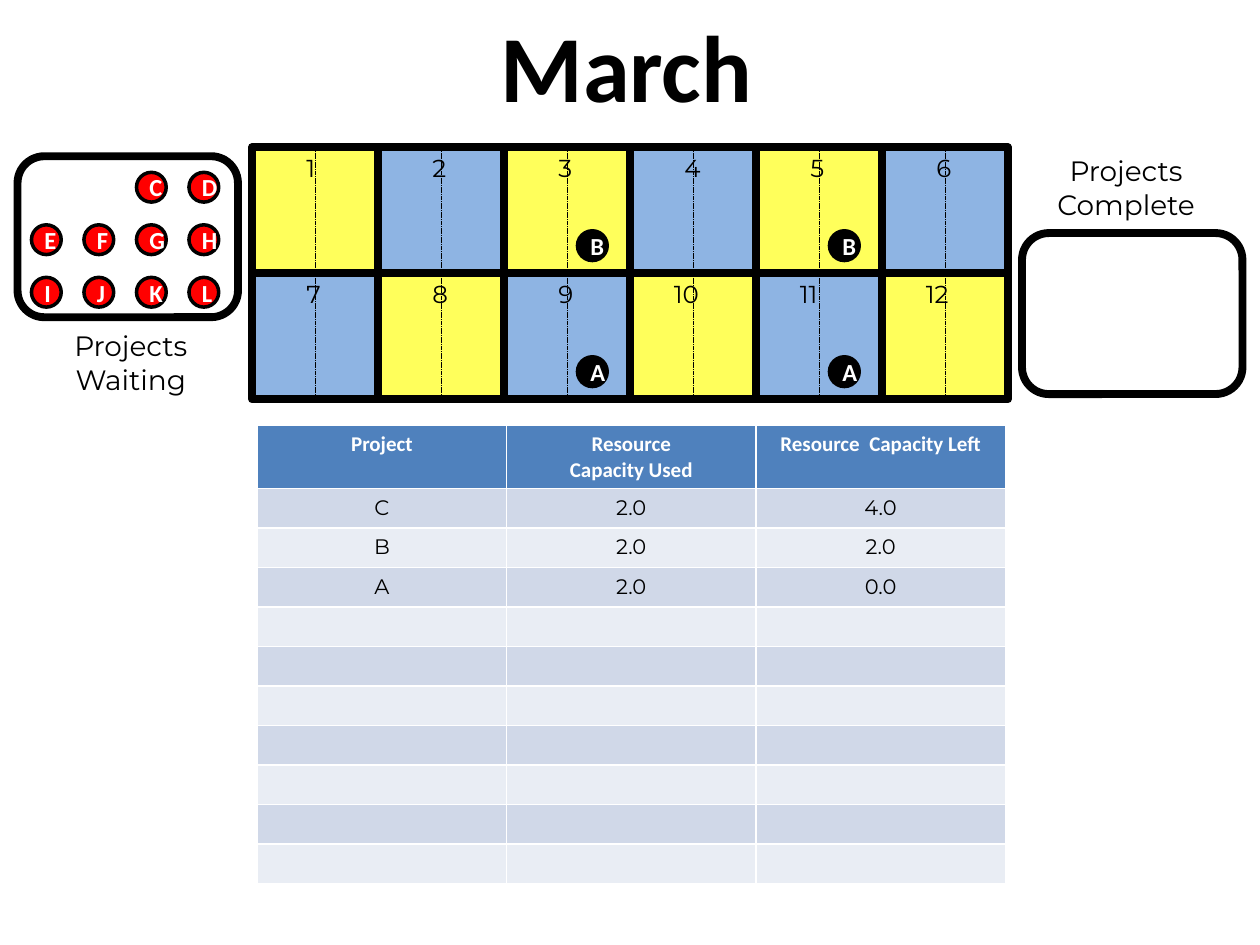
from lxml import etree
from pptx import Presentation
from pptx.dml.color import RGBColor
from pptx.enum.dml import MSO_LINE
from pptx.enum.shapes import MSO_CONNECTOR, MSO_SHAPE
from pptx.enum.text import MSO_ANCHOR, MSO_AUTO_SIZE, PP_ALIGN
from pptx.oxml.ns import qn
from pptx.util import Pt

RECTANGLE, ROUNDED, OVAL = MSO_SHAPE.RECTANGLE, MSO_SHAPE.ROUNDED_RECTANGLE, MSO_SHAPE.OVAL
STRAIGHT, DOTTED = MSO_CONNECTOR.STRAIGHT, MSO_LINE.SQUARE_DOT
LEFT, CENTER = PP_ALIGN.LEFT, PP_ALIGN.CENTER
MIDDLE, FIT_SHAPE = MSO_ANCHOR.MIDDLE, MSO_AUTO_SIZE.SHAPE_TO_FIT_TEXT

BLACK = RGBColor(0, 0, 0)
WHITE = RGBColor(255, 255, 255)
RED = RGBColor(255, 0, 0)
YELLOW = RGBColor(0xFF, 0xFF, 0x5B)
BLUE = RGBColor(0x8E, 0xB4, 0xE3)
HEADER_BLUE = RGBColor(0x4F, 0x81, 0xBD)
BANDS = (RGBColor(0xD0, 0xD8, 0xE8), RGBColor(0xE9, 0xED, 0xF4))
HEADING_FONT, BODY_FONT = "Calibri", "Montserrat"

# Content
TITLE = "March"
WAITING = [(None, None, "C", "D"), ("E", "F", "G", "H"), ("I", "J", "K", "L")]
ACTIVE = {3: "B", 5: "B", 9: "A", 11: "A"}  # board square: project
HEADERS = ("Project", "Resource\nCapacity Used", "Resource  Capacity Left")
CAPACITY = [("C", "2.0", "4.0"), ("B", "2.0", "2.0"), ("A", "2.0", "0.0")]
EMPTY_ROWS = 7
FRAMES = [(10, 89.3), (584, 133.2)]
CAPTIONS = [("Projects Waiting", 17.3, 184.3), ("Projects Complete", 586, 84.2)]

# Layout
BOARD_LEFT, BOARD_TOP, SQUARE = 144, 84.2, 72
BOARD_COLUMNS, BOARD_ROWS = 6, 2
WAITING_LEFT, WAITING_TOP, WAITING_STEP = 18, 98.5, 30
TOKEN = 17
HEADER_HEIGHT, ROW_HEIGHT, COLUMN_WIDTH = 36, 22.6, 142.5

presentation = Presentation()
presentation.slide_width, presentation.slide_height = Pt(720), Pt(540)
slide = presentation.slides.add_slide(presentation.slide_layouts[6])


def format_text(text_frame, size, font, color, bold=False, align=CENTER):
    for paragraph in text_frame.paragraphs:
        paragraph.alignment = align
        for run in paragraph.runs:
            run.font.size, run.font.name = Pt(size), font
            run.font.bold, run.font.color.rgb = bold, color


def add_box(kind, left, top, width, height, fill, line_width):
    shape = slide.shapes.add_shape(kind, Pt(left), Pt(top), Pt(width), Pt(height))
    shape.shadow.inherit = False
    if fill is None:
        shape.fill.background()
    else:
        shape.fill.solid()
        shape.fill.fore_color.rgb = fill
    shape.line.color.rgb, shape.line.width = BLACK, Pt(line_width)
    return shape


def add_token(letter, left, top, fill):
    text_frame = add_box(OVAL, left, top, TOKEN, TOKEN, fill, 2).text_frame
    text_frame.text = letter
    text_frame.vertical_anchor = MIDDLE
    format_text(text_frame, 14, HEADING_FONT, WHITE, bold=True)


def add_label(text, left, top, width, height, size, font=BODY_FONT,
              bold=False, align=CENTER, wrap=True):
    box = slide.shapes.add_textbox(Pt(left), Pt(top), Pt(width), Pt(height))
    text_frame = box.text_frame
    text_frame.text = text
    text_frame.word_wrap, text_frame.auto_size = wrap, FIT_SHAPE
    format_text(text_frame, size, font, BLACK, bold, align)
    return text_frame


def square_origin(number):
    row, column = divmod(number - 1, BOARD_COLUMNS)
    return BOARD_LEFT + column * SQUARE, BOARD_TOP + row * SQUARE


# Board squares in a checker pattern
numbers = range(1, BOARD_COLUMNS * BOARD_ROWS + 1)
for number in numbers:
    row, column = divmod(number - 1, BOARD_COLUMNS)
    fill = BLUE if (row + column) % 2 else YELLOW
    add_box(RECTANGLE, *square_origin(number), SQUARE, SQUARE, fill, 4.5)

# Dotted half-square lines
for column in range(BOARD_COLUMNS):
    x = Pt(BOARD_LEFT + (column + 0.5) * SQUARE)
    connector = slide.shapes.add_connector(
        STRAIGHT, x, Pt(BOARD_TOP), x, Pt(BOARD_TOP + BOARD_ROWS * SQUARE))
    connector.line.color.rgb, connector.line.width = BLACK, Pt(0.25)
    connector.line.dash_style = DOTTED
    etree.SubElement(connector._element.spPr, qn("a:effectLst"))

# Square numbers and active projects
for number in numbers:
    left, top = square_origin(number)
    indent, width = (24, 30) if number < 10 else (18, 36)
    add_label(str(number), left + indent, top, width, 24.2, 14, align=LEFT)
    if number in ACTIVE:
        add_token(ACTIVE[number], left + 42, top + 47.7, BLACK)

# Waiting projects
for row, letters in enumerate(WAITING):
    for column, letter in enumerate(letters):
        if letter:
            add_token(letter, WAITING_LEFT + column * WAITING_STEP,
                      WAITING_TOP + row * WAITING_STEP, RED)

# Waiting and complete areas
for left, top in FRAMES:
    add_box(ROUNDED, left, top, 126, 92, None, 4.5)
for caption, left, top in CAPTIONS:
    add_label(caption, left, top, 115, 46, 16)

# Title with outlined letters
title = add_label(TITLE, 278, 1, 160, 72.7, 54, HEADING_FONT, bold=True, wrap=False)
run_properties = title.paragraphs[0].runs[0]._r.get_or_add_rPr()
outline = etree.Element(qn("a:ln"), w=str(Pt(1)))
outline_fill = etree.SubElement(outline, qn("a:solidFill"))
etree.SubElement(outline_fill, qn("a:srgbClr"), val=str(BLACK))
run_properties.insert(0, outline)

# Capacity table; its style draws the white borders
rows = [HEADERS] + CAPACITY + [("",) * len(HEADERS)] * EMPTY_ROWS
table = slide.shapes.add_table(
    len(rows), len(HEADERS), Pt(147), Pt(243), Pt(COLUMN_WIDTH * len(HEADERS)),
    Pt(HEADER_HEIGHT + ROW_HEIGHT * (len(rows) - 1))).table
for column in table.columns:
    column.width = Pt(COLUMN_WIDTH)
for row_index, texts in enumerate(rows):
    is_header = row_index == 0
    table.rows[row_index].height = Pt(HEADER_HEIGHT if is_header else ROW_HEIGHT)
    for column_index, text in enumerate(texts):
        cell = table.cell(row_index, column_index)
        cell.fill.solid()
        cell.fill.fore_color.rgb = HEADER_BLUE if is_header else BANDS[(row_index - 1) % 2]
        cell.text_frame.text = text
        if is_header:
            format_text(cell.text_frame, 12, HEADING_FONT, WHITE, bold=True)
        else:
            format_text(cell.text_frame, 12, BODY_FONT, BLACK)
        if not text:  # keeps the empty rows low
            etree.SubElement(cell.text_frame.paragraphs[0]._p, qn("a:endParaRPr"), sz="1200")

presentation.save("out.pptx")
